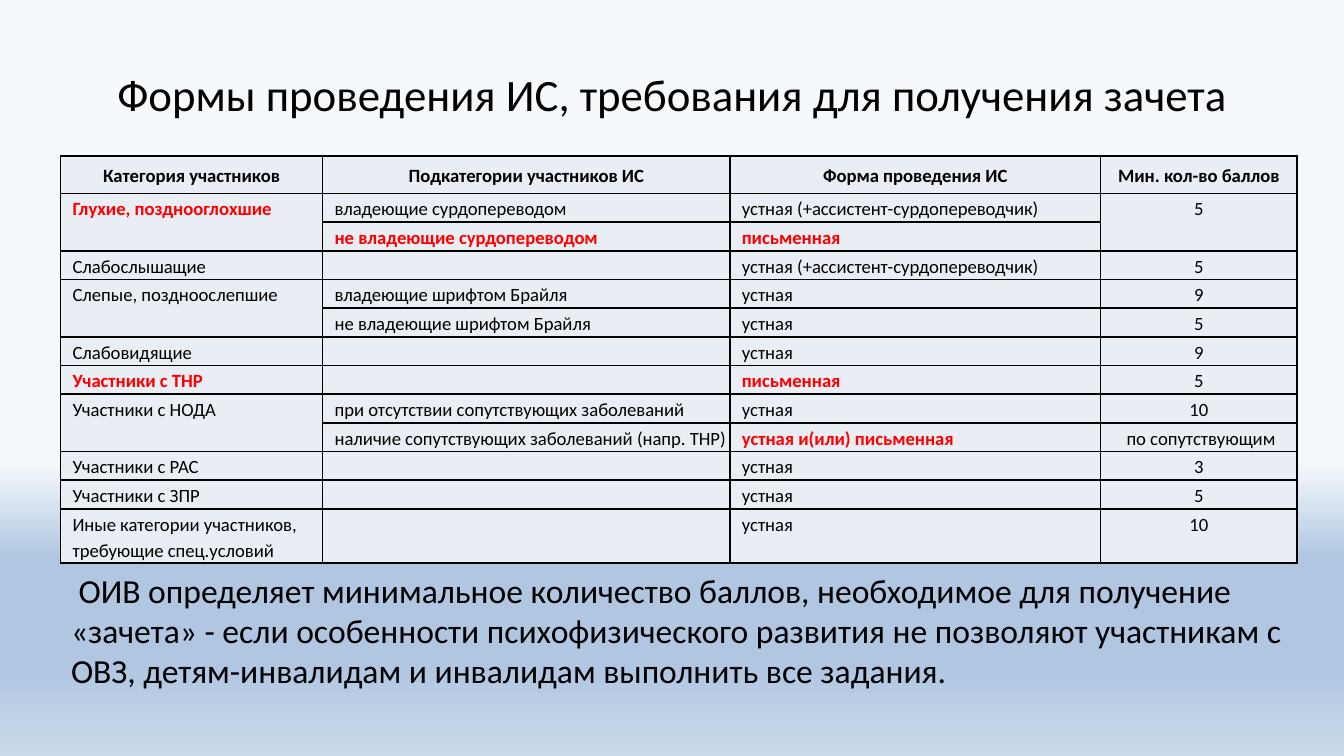
import pptx
import pptx.util
import pptx.dml.color
import pptx.enum.text
import pptx.oxml
import pptx.oxml.ns
from pptx.util import Inches

FONT = "Calibri"
BLACK, RED, CELL_FILL = "000000", "FF0000", "E9EDF4"
ALIGN = pptx.enum.text.PP_ALIGN
ANCHOR = pptx.enum.text.MSO_ANCHOR

BACKGROUND_STOPS = [(61, "F6F9FC"), (74, "B0C6E1"), (88, "B0C6E1"), (100, "CAD9EB")]
COLUMN_WIDTHS = [1.95, 3.03, 2.76, 1.46]
TABLE_HEIGHT, HEADER_HEIGHT, LAST_HEIGHT = 3.03, 0.28, 0.4
SCORE_COLUMN = 3

# None continues the cell above
ROWS = [
    ["Категория участников", "Подкатегории участников ИС", "Форма проведения ИС",
     "Мин. кол-во баллов"],
    ["Глухие, позднооглохшие", "владеющие сурдопереводом",
     "устная (+ассистент-сурдопереводчик)", "5"],
    [None, "не владеющие сурдопереводом", "письменная", None],
    ["Слабослышащие", "", "устная (+ассистент-сурдопереводчик)", "5"],
    ["Слепые, поздноослепшие", "владеющие шрифтом Брайля", "устная", "9"],
    [None, "не владеющие шрифтом Брайля", "устная", "5"],
    ["Слабовидящие", "", "устная", "9"],
    ["Участники с ТНР", "", "письменная", "5"],
    ["Участники с НОДА", "при отсутствии сопутствующих заболеваний", "устная", "10"],
    [None, "наличие сопутствующих заболеваний (напр. ТНР)",
     "устная и(или) письменная", " по сопутствующим"],
    ["Участники с РАС", "", "устная", "3"],
    ["Участники с ЗПР", "", "устная", "5"],
    ["Иные категории участников, требующие спец.условий", "", "устная", "10"],
]
HIGHLIGHTED = {"Глухие, позднооглохшие", "не владеющие сурдопереводом", "письменная",
               "Участники с ТНР", "устная и(или) письменная"}


def rgb(color):
    return pptx.dml.color.RGBColor.from_string(color)


def set_background(slide):
    fill = slide.background.fill
    fill.gradient()
    fill.gradient_angle = 270
    stops = slide._element.find(".//" + pptx.oxml.ns.qn("a:gsLst"))
    for stop in list(stops):
        stops.remove(stop)
    for position, color in BACKGROUND_STOPS:
        stops.append(pptx.oxml.parse_xml(
            f'<a:gs {pptx.oxml.ns.nsdecls("a")} pos="{position * 1000}">'
            f'<a:srgbClr val="{color}"/></a:gs>'))


def format_runs(p, size, color=BLACK, bold=False):
    for r in p.runs:
        r.font.name = FONT
        r.font.size = pptx.util.Pt(size)
        r.font.bold = bold
        r.font.color.rgb = rgb(color)


def add_text(slide, box, text, size, align=ALIGN.LEFT, anchor=ANCHOR.TOP):
    tf = slide.shapes.add_textbox(*map(Inches, box)).text_frame
    tf.word_wrap = True
    tf.vertical_anchor = anchor
    tf.text = text
    p = tf.paragraphs[0]
    p.alignment = align
    format_runs(p, size)


def add_borders(cell):
    tc_pr = cell._tc.get_or_add_tcPr()
    for side in ("lnL", "lnR", "lnT", "lnB"):
        tc_pr.append(pptx.oxml.parse_xml(
            f'<a:{side} {pptx.oxml.ns.nsdecls("a")} w="12700"><a:solidFill>'
            f'<a:srgbClr val="{BLACK}"/></a:solidFill></a:{side}>'))


def style_cell(cell):
    cell.margin_left = cell.margin_right = Inches(0.01)
    cell.margin_top = cell.margin_bottom = Inches(0.01)
    add_borders(cell)
    cell.fill.solid()
    cell.fill.fore_color.rgb = rgb(CELL_FILL)


def fill_cell(cell, text, is_header, centred):
    cell.text_frame.text = text or ""
    cell.vertical_anchor = ANCHOR.MIDDLE if is_header else ANCHOR.TOP
    p = cell.text_frame.paragraphs[0]
    p.line_spacing = 1.15
    if centred:
        p.alignment = ALIGN.CENTER
    else:
        p._p.get_or_add_pPr().set("marL", str(Inches(0.08)))
    if text:
        highlighted = text in HIGHLIGHTED
        format_runs(p, 10, RED if highlighted else BLACK, is_header or highlighted)
    else:
        # An empty cell must not stretch its row
        p._p.get_or_add_endParaRPr().set("sz", "1000")


def add_requirements_table(slide):
    inner_rows = len(ROWS) - 2
    row_height = (TABLE_HEIGHT - HEADER_HEIGHT - LAST_HEIGHT) / inner_rows
    heights = [HEADER_HEIGHT] + [row_height] * inner_rows + [LAST_HEIGHT]
    table = slide.shapes.add_table(
        len(ROWS), len(COLUMN_WIDTHS), Inches(0.45), Inches(1.16),
        Inches(sum(COLUMN_WIDTHS)), Inches(TABLE_HEIGHT)).table
    for column, width in zip(table.columns, COLUMN_WIDTHS):
        column.width = Inches(width)
    for row, height in zip(table.rows, heights):
        row.height = Inches(height)
    for i, texts in enumerate(ROWS):
        for j, text in enumerate(texts):
            cell = table.cell(i, j)
            style_cell(cell)
            fill_cell(cell, text, i == 0, i == 0 or j == SCORE_COLUMN)
            if text is None:
                table.cell(i - 1, j).merge(cell)


def main():
    prs = pptx.Presentation()
    prs.slide_width = Inches(10)
    prs.slide_height = prs.slide_width * 9 // 16
    slide = prs.slides.add_slide(prs.slide_layouts[6])
    set_background(slide)
    add_text(slide, (0.5, 0.23, 9, 0.94),
             "Формы проведения ИС, требования для получения зачета", 24,
             ALIGN.CENTER, ANCHOR.MIDDLE)
    add_requirements_table(slide)
    add_text(slide, (0.43, 4.19, 9.21, 1.01),
             " ОИВ определяет минимальное количество баллов, необходимое для получение "
             "«зачета» - если особенности психофизического развития не позволяют "
             "участникам с ОВЗ, детям-инвалидам и инвалидам выполнить все задания.", 18)
    prs.save("out.pptx")


if __name__ == "__main__":
    main()
